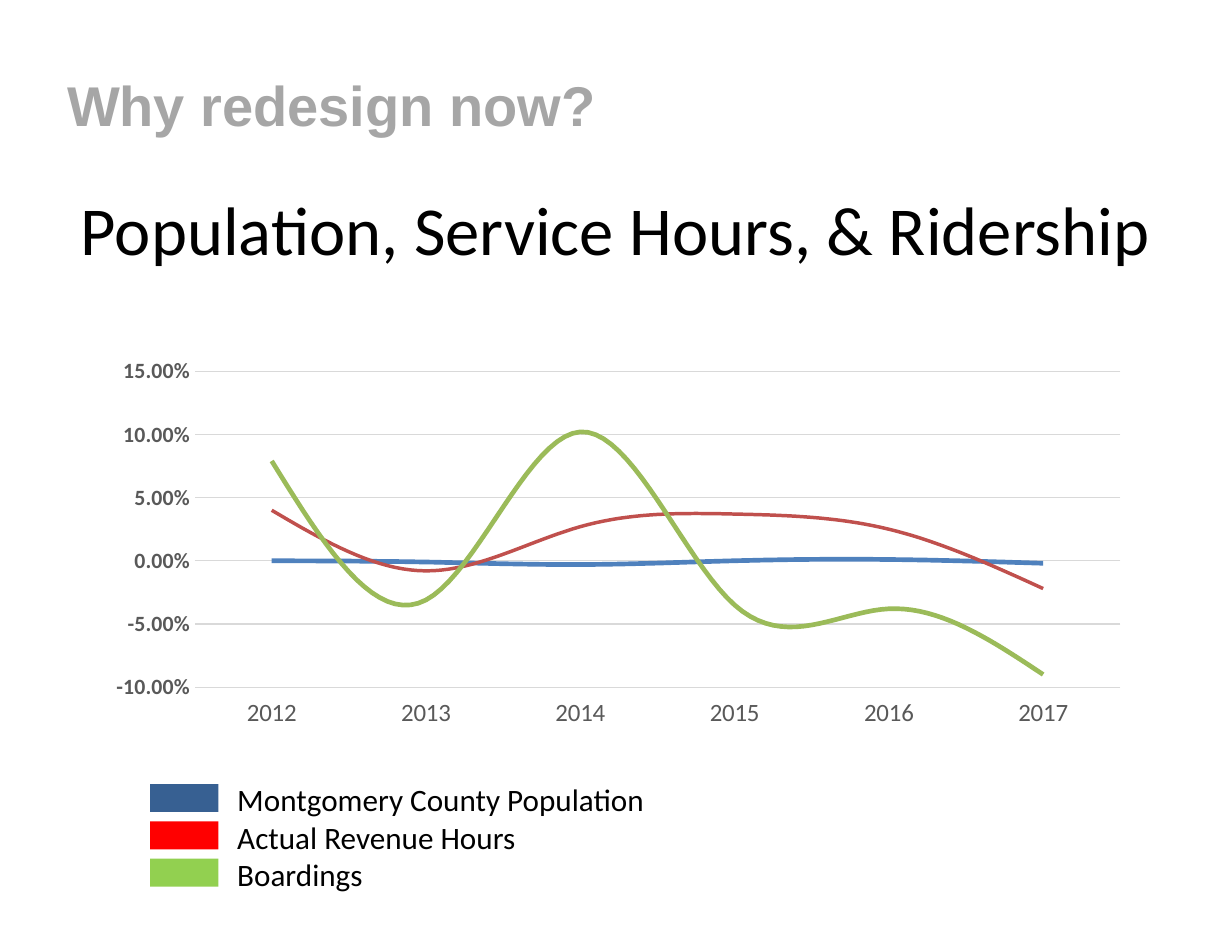
from dataclasses import dataclass

from lxml import etree
from pptx import Presentation
from pptx import util as u
from pptx.chart.data import CategoryChartData
from pptx.dml.color import RGBColor
from pptx.enum import chart as ch
from pptx.enum import shapes, text
from pptx.oxml.ns import qn


@dataclass(frozen=True)
class Theme:
    """Colours, fonts and type sizes of the slide."""
    ink: str = "000000"
    heading: str = "A6A6A6"
    axis: str = "595959"
    grid: str = "D9D9D9"
    heading_font: str = "Arial"
    body_font: str = "Calibri"
    title_size: float = 44.1
    heading_size: int = 36
    legend_size: int = 20
    category_size: int = 16
    value_size: int = 14


class SlideWriter:
    """Adds styled elements to the current slide."""

    def __init__(self, slide, theme):
        self.slide = slide
        self.theme = theme

    def box(self, *lengths):
        return [u.Inches(length) for length in lengths]

    def style(self, font, color, **values):
        for name, value in values.items():
            setattr(font, name, value)
        font.color.rgb = RGBColor.from_string(color)

    def line(self, line, color, width):
        line.color.rgb = RGBColor.from_string(color)
        line.width = u.Pt(width)

    def title(self, words, place):
        title = self.slide.shapes.title
        title.left, title.top, title.width, title.height = self.box(*place)
        frame = title.text_frame
        margins = {"margin_left": 0.11, "margin_right": 0.11,
                   "margin_top": 0.06, "margin_bottom": 0.06}
        for name, length in margins.items():
            setattr(frame, name, u.Inches(length))
        frame.word_wrap = True
        frame.auto_size = text.MSO_AUTO_SIZE.NONE
        frame.vertical_anchor = text.MSO_ANCHOR.MIDDLE
        frame.text = words
        paragraph = frame.paragraphs[0]
        paragraph.alignment = text.PP_ALIGN.CENTER
        self.style(paragraph.runs[0].font, self.theme.ink, name=self.theme.body_font,
                   size=u.Pt(self.theme.title_size))

    def text(self, lines, place, color, parent=None, **values):
        frame = (parent or self.slide).shapes.add_textbox(*self.box(*place)).text_frame
        frame.word_wrap = True
        frame.text = "\n".join(lines)
        for paragraph in frame.paragraphs:
            self.style(paragraph.runs[0].font, color, **values)

    def swatch(self, parent, place, color):
        swatch = parent.shapes.add_shape(shapes.MSO_SHAPE.RECTANGLE, *self.box(*place))
        swatch.shadow.inherit = False
        swatch.fill.solid()
        swatch.fill.fore_color.rgb = RGBColor.from_string(color)
        swatch.line.fill.background()

    def legend(self, entries):
        group = self.slide.shapes.add_group_shape()
        self.text([name for name, _ in entries], (2.02, 6.92, 7.56, 1.11), self.theme.ink,
                  group, name=self.theme.body_font, size=u.Pt(self.theme.legend_size))
        for row, (_, color) in enumerate(entries):
            self.swatch(group, (1.34, 7 + row / 3, 0.61, 0.25), color)

    def line_chart(self, years, series, place, plot_area):
        data = CategoryChartData(number_format="0.00%")
        data.categories = years
        for name, values, *_ in series:
            data.add_series(name, values)
        chart = self.slide.shapes.add_chart(
            ch.XL_CHART_TYPE.LINE, *self.box(*place), data).chart
        chart.has_title = chart.has_legend = False
        self.style(chart.font, self.theme.ink, name=self.theme.body_font, size=u.Pt(10))
        for plotted, (_, _, color, width) in zip(chart.plots[0].series, series):
            plotted.smooth = True
            plotted.marker.style = ch.XL_MARKER_STYLE.NONE
            self.line(plotted.format.line, color, width)
        chart.plots[0].vary_by_categories = False
        self.axes(chart)
        self.plot_layout(chart, plot_area)

    def axes(self, chart):
        theme = self.theme
        years, rates = chart.category_axis, chart.value_axis
        for axis, size, bold in ((years, theme.category_size, False),
                                 (rates, theme.value_size, True)):
            axis.major_tick_mark = axis.minor_tick_mark = ch.XL_TICK_MARK.NONE
            self.style(axis.tick_labels.font, theme.axis, name=theme.body_font,
                       size=u.Pt(size), bold=bold)
        years.tick_label_position = ch.XL_TICK_LABEL_POSITION.LOW
        self.line(years.format.line, theme.grid, 0.75)
        scale = {"minimum_scale": -0.1, "maximum_scale": 0.15,
                 "major_unit": 0.05, "has_major_gridlines": True}
        for name, value in scale.items():
            setattr(rates, name, value)
        rates.format.line.fill.background()
        self.line(rates.major_gridlines.format.line, theme.grid, 0.75)
        rates.tick_labels.number_format = "0.00%"
        rates.tick_labels.number_format_is_linked = False

    def plot_layout(self, chart, plot_area):
        area = chart.element.find(".//" + qn("c:plotArea"))
        for old in area.findall(qn("c:layout")):
            area.remove(old)
        layout = etree.Element(qn("c:layout"))
        manual = etree.SubElement(layout, qn("c:manualLayout"))
        settings = {"layoutTarget": "inner", "xMode": "edge", "yMode": "edge",
                    **dict(zip("xywh", plot_area))}
        for name, value in settings.items():
            etree.SubElement(manual, qn("c:" + name), val=str(value))
        area.insert(0, layout)


def main():
    deck = Presentation()
    deck.slide_width, deck.slide_height = u.Inches(11), u.Inches(8.5)
    theme = Theme()
    writer = SlideWriter(deck.slides.add_slide(deck.slide_layouts[5]), theme)

    writer.title("Population, Service Hours, & Ridership", (0.55, 1.33, 9.9, 1.42))
    writer.line_chart(
        ["2012", "2013", "2014", "2015", "2016", "2017"],
        [("Series 1", (0, -0.001, -0.003, 0, 0.001, -0.002), "4F81BD", 3),
         ("Series 2", (0.04, -0.008, 0.027, 0.037, 0.025, -0.022), "C0504D", 2.25),
         ("Series 3", (0.079, -0.031, 0.102, -0.035, -0.038, -0.09), "9BBB59", 3)],
        (0.76, 2.8, 9.49, 3.93), (0.103, 0.131, 0.871, 0.718))
    writer.text(["Why redesign now?"], (0.5, 0.58, 8.92, 0.67), theme.heading,
                name=theme.heading_font, size=u.Pt(theme.heading_size), bold=True)
    writer.legend([("Montgomery County Population", "376092"),
                   ("Actual Revenue Hours", "FF0000"),
                   ("Boardings", "92D050")])
    deck.save("out.pptx")


if __name__ == "__main__":
    main()
